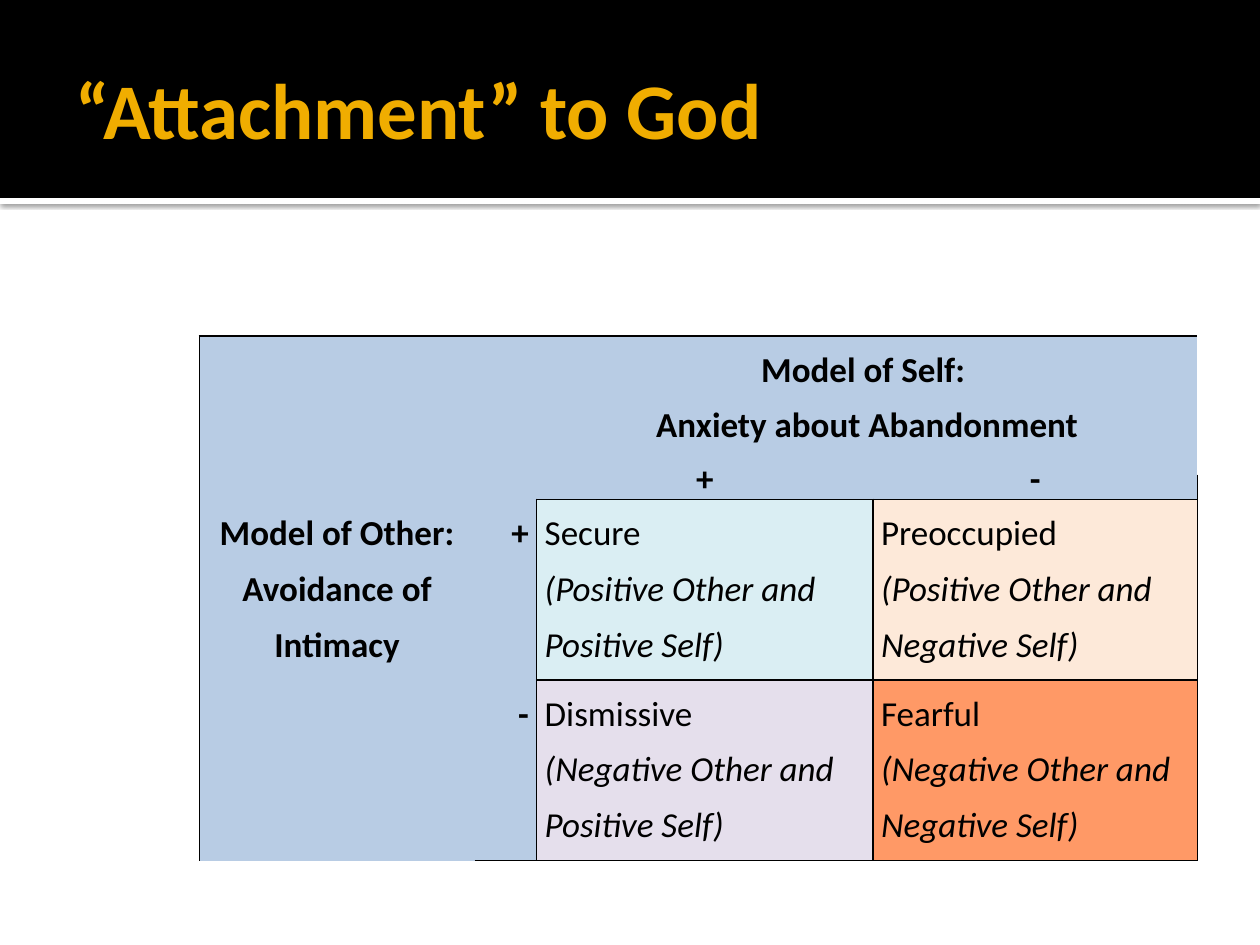
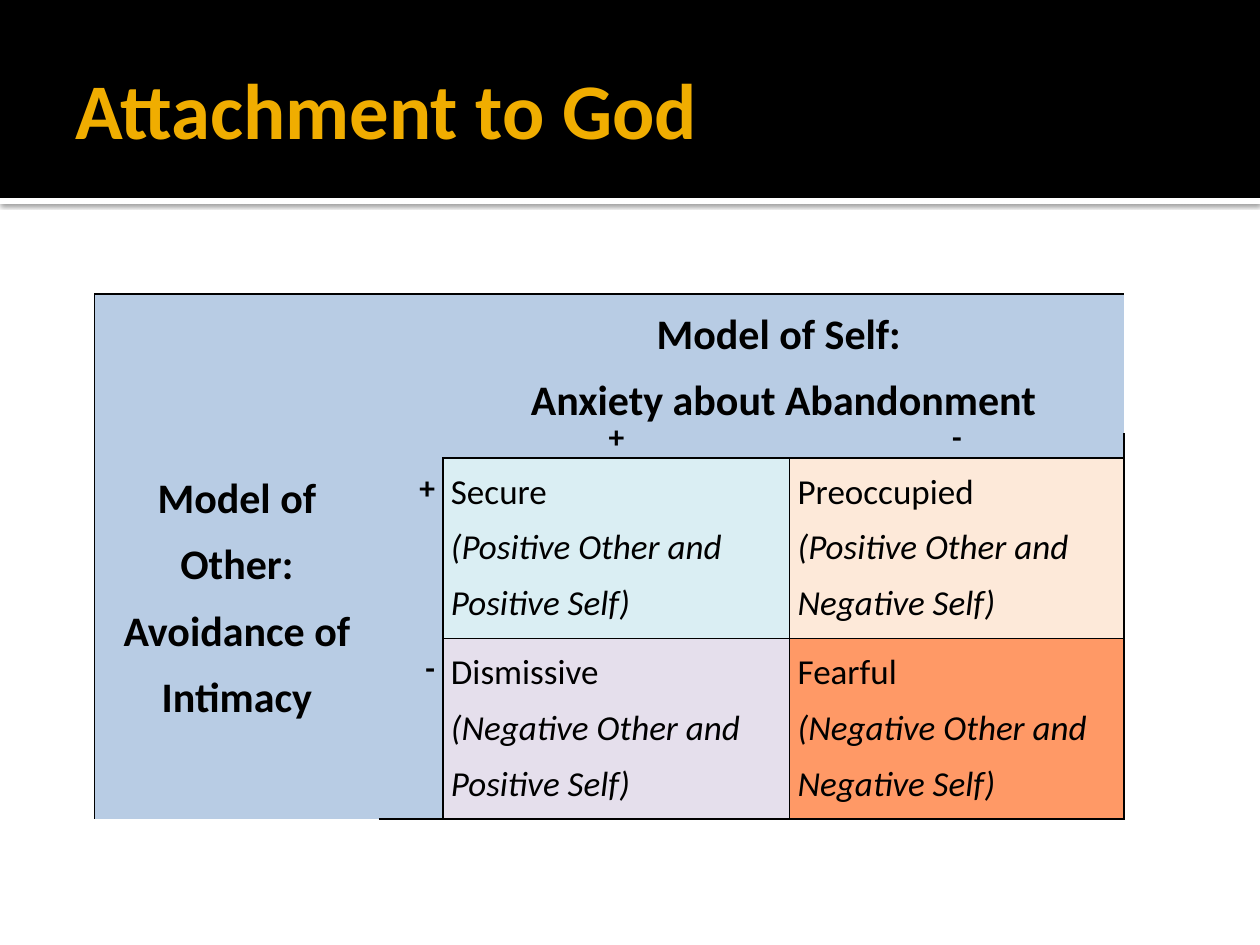
from lxml.etree import SubElement as Sub
from pptx import Presentation
from pptx.dml.color import RGBColor as RGB
from pptx.enum.shapes import MSO_SHAPE as Shape
from pptx.enum.text import MSO_ANCHOR as Anchor, PP_ALIGN as Align
from pptx.oxml.ns import qn
from pptx.util import Cm, Pt

BLACK = RGB(0, 0, 0)
WHITE = RGB(255, 255, 255)
GOLD = RGB(0xF0, 0xAD, 0x00)
BLUE = RGB(0xB8, 0xCC, 0xE4)
AQUA = RGB(0xDA, 0xEE, 0xF3)
PEACH = RGB(0xFD, 0xE9, 0xD9)
LILAC = RGB(0xE5, 0xDF, 0xEC)
CORAL = RGB(0xFF, 0x99, 0x66)

FONT = "Calibri"
SHARES = (0.276, 0.062, 0.337, 0.325)
ROWS = (2.8, 0.5, 3.64, 3.64)
TYPES = {
    (2, 2): ("Secure ", "(Positive Other and Positive Self)", AQUA),
    (2, 3): ("Preoccupied ", "(Positive Other and Negative Self)", PEACH),
    (3, 2): ("Dismissive ", "(Negative Other and Positive Self)", LILAC),
    (3, 3): ("Fearful ", "(Negative Other and Negative Self)", CORAL),
}
SIGNS = ("+", "-")
LOOSE = dict(line_spacing=1.3, space_before=Pt(6), space_after=Pt(6))
TIGHT = dict(line_spacing=0.5, space_before=Pt(12))
MID = dict(alignment=Align.CENTER)


def apply(item, form):
    for key, value in form.items():
        setattr(item, key, value)


def sides(row, col):
    """Tell which sides of a cell have a line, as left, right, top, bottom."""
    box = row >= 2 and col >= 2
    return (
        ("lnL", col == 0 or box),
        ("lnR", col == 3 or (row >= 2 and col >= 1)),
        ("lnT", row == 0 or box),
        ("lnB", row == 3 or (row >= 1 and col >= 2)),
    )


class Deck:
    def __init__(self):
        self.show = Presentation()
        self.show.slide_width, self.show.slide_height = Cm(25.4), Cm(19.05)
        self.slide = None

    def page(self, title):
        self.slide = self.show.slides.add_slide(self.show.slide_layouts[6])
        self.shade(self.band(3.99, 0.12, WHITE))
        self.band(0, 3.99, BLACK)
        self.title(title)

    def band(self, top, high, color):
        bar = self.slide.shapes.add_shape(
            Shape.RECTANGLE, 0, Cm(top), self.show.slide_width, Cm(high))
        bar.fill.solid()
        bar.fill.fore_color.rgb = color
        bar.line.fill.background()
        bar.shadow.inherit = False
        return bar

    def shade(self, bar):
        """Cast a soft shadow straight down."""
        glow = bar._element.spPr.find(qn("a:effectLst"))
        cast = Sub(glow, qn("a:outerShdw"), blurRad=str(Pt(2.5)),
                   dist=str(Pt(0.8)), dir="5400000", rotWithShape="0")
        tint = Sub(cast, qn("a:srgbClr"), val=str(BLACK))
        Sub(tint, qn("a:alpha"), val="60000")

    def title(self, text):
        box = self.slide.shapes.add_textbox(
            Cm(1.27), Cm(0.43), Cm(22.86), Cm(3.48))
        apply(box.text_frame, dict(
            word_wrap=True, vertical_anchor=Anchor.MIDDLE,
            margin_left=Cm(0.25), margin_right=Cm(0.13),
            margin_top=Cm(0.13), margin_bottom=Cm(0.13)))
        self.run(box.text_frame.paragraphs[0], text, 45, color=GOLD)

    def run(self, para, text, size, color=BLACK, bold=True, italic=False):
        run = para.add_run()
        run.text = text
        apply(run.font, dict(name=FONT, size=Pt(size), bold=bold, italic=italic))
        run.font.color.rgb = color

    def edge(self, cell, row, col):
        props = cell._tc.get_or_add_tcPr()
        for spot, (tag, drawn) in enumerate(sides(row, col)):
            line = Sub(props, qn("a:" + tag), w=str(Pt(1) if drawn else 0))
            if drawn:
                Sub(Sub(line, qn("a:solidFill")), qn("a:srgbClr"), val=str(BLACK))
            else:
                Sub(line, qn("a:noFill"))
            props.insert(spot, line)

    def cell(self, grid, row, col):
        """Give a cell its fill, margins and lines."""
        cell = grid.cell(row, col)
        apply(cell, dict(margin_left=Cm(0.16), margin_right=Cm(0.16),
                         margin_top=0, margin_bottom=0))
        cell.fill.solid()
        cell.fill.fore_color.rgb = TYPES.get((row, col), (BLUE,))[-1]
        cell.text_frame.paragraphs[0].font.size = Pt(10)
        self.edge(cell, row, col)

    def words(self, grid, row, col, parts, form):
        """Write parts, each text with its run format, on lines of one paragraph."""
        para = grid.cell(row, col).text_frame.paragraphs[0]
        apply(para, form)
        for spot, (text, look) in enumerate(parts):
            if spot:
                para.add_line_break()
            self.run(para, text, **look)

    def table(self, left, top, wide, head, sign):
        """Draw the grid; head and sign are text sizes."""
        frame = self.slide.shapes.add_table(
            4, 4, Cm(left), Cm(top), Cm(wide), Cm(sum(ROWS)))
        grid = frame.table
        apply(grid, dict(first_row=False, horz_banding=False))
        for col, share in zip(grid.columns, SHARES):
            col.width = Cm(round(wide * share, 2))
        for row, high in zip(grid.rows, ROWS):
            row.height = Cm(high)
        for row in range(4):
            for col in range(4):
                self.cell(grid, row, col)
        grid.cell(0, 2).merge(grid.cell(0, 3))
        grid.cell(2, 0).merge(grid.cell(3, 0))

        big, mark = dict(size=head), dict(size=sign)
        self.words(grid, 0, 2, [("Model of Self: ", big),
                                ("Anxiety about Abandonment", big)], LOOSE | MID)
        self.words(grid, 2, 0, [("Model of Other: Avoidance of Intimacy", big)],
                   LOOSE | MID)
        drop = dict(alignment=Align.RIGHT, space_before=Pt(2 * sign + 3))
        for spot, text in enumerate(SIGNS, 2):
            self.words(grid, 1, spot, [(text, mark)], TIGHT | MID)
            self.words(grid, spot, 1, [(text, mark)], LOOSE | drop)
        plain = dict(size=20, bold=False)
        for (row, col), (name, note, _) in TYPES.items():
            self.words(grid, row, col,
                       [(name, plain), (note, plain | dict(italic=True))], LOOSE)


def main():
    deck = Deck()
    deck.page("“Attachment” to God")
    deck.table(4.02, 6.77, 20.12, head=20, sign=20)
    deck.page("Attachment to God")
    deck.table(1.91, 5.93, 20.75, head=24, sign=18)
    deck.show.save("out.pptx")


if __name__ == "__main__":
    main()
